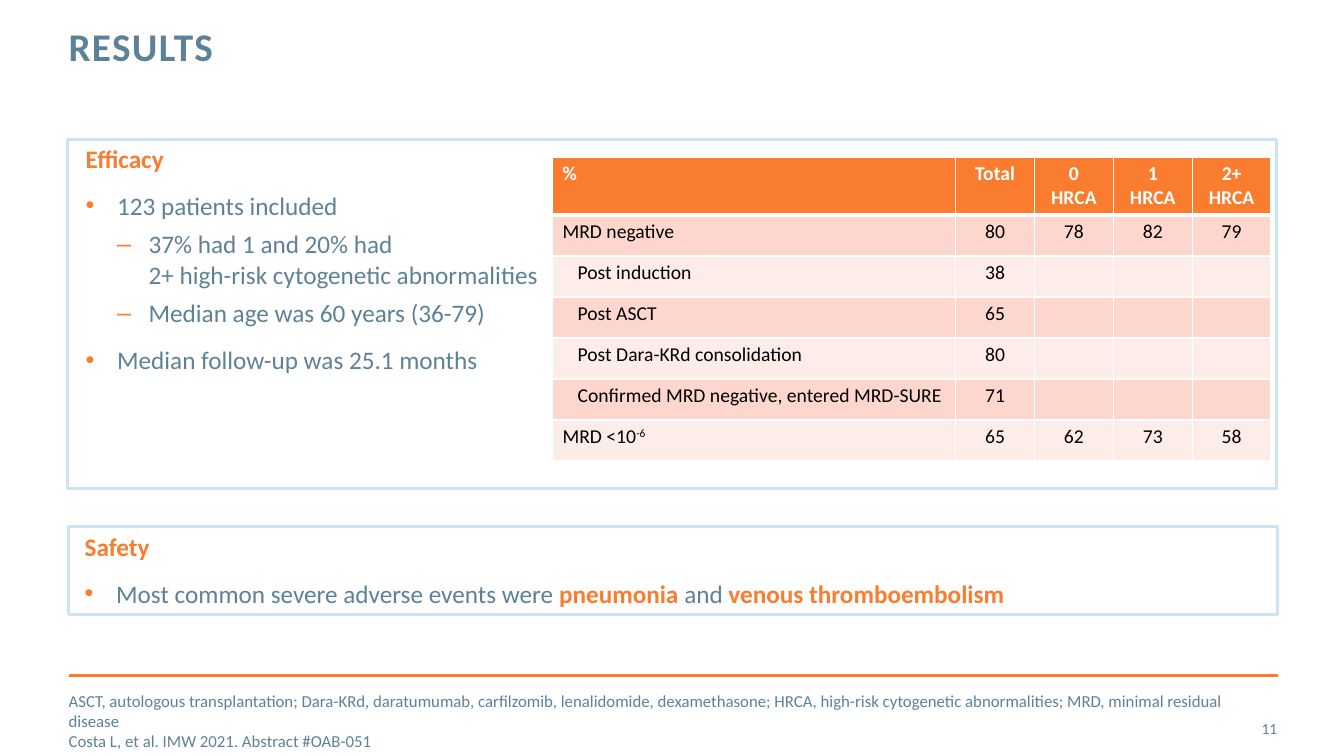
from copy import deepcopy

from lxml import etree
from pptx import Presentation, util as u
from pptx.dml.color import RGBColor
from pptx.enum import shapes, text
from pptx.oxml import ns

ORANGE, SLATE, SKY = "FA7C2E", "5D8298", "C9E5F3"
WHITE, BLACK = "FFFFFF", "000000"
BANDS = ("FDD7CD", "FEECE8")
HEAD = dict(size=18, color=ORANGE, bold=True)
ITEM = dict(size=18, color=SLATE, bold=False)
NOTE = dict(size=12, color=SLATE)
BULLETS = {"•": 0, "–": 1}


def rgb(value):
    return RGBColor.from_string(value)


def sub(parent, tag, **attrs):
    return etree.SubElement(parent, ns.qn("a:" + tag), attrs)


class Deck:
    font = "Calibri"

    def __init__(self, width, height):
        self.prs = Presentation()
        self.prs.slide_width, self.prs.slide_height = u.Pt(width), u.Pt(height)
        self.slide = self.prs.slides.add_slide(self.prs.slide_layouts[1])
        self.shapes = self.slide.shapes

    def style(self, font, size, color, **fmt):
        values = dict(name=self.font, size=u.Pt(size), **fmt)
        for key, value in values.items():
            setattr(font, key, value)
        font.color.rgb = rgb(color)

    def add_runs(self, p, runs):
        for words, fmt in runs:
            fmt = dict(fmt)
            extra = fmt.pop("extra", {})
            for i, line in enumerate(words.split("\n")):
                if i:
                    p.add_line_break()
                    p._p[-1].append(deepcopy(r._r.rPr))
                r = p.add_run()
                r.text = line
                self.style(r.font, **fmt)
                for key, value in extra.items():
                    r._r.get_or_add_rPr().set(key, value)

    def bullet(self, p, mark):
        pPr = p._p.get_or_add_pPr()
        level = BULLETS.get(mark, 0)
        p.level = level
        pPr.set("marL", str(u.Pt(22.5 * (level + 1)) if mark else 0))
        pPr.set("indent", str(u.Pt(-22.5) if mark else 0))
        if mark:
            sub(sub(pPr, "buClr"), "srgbClr", val=ORANGE)
            sub(pPr, "buFont", typeface="Arial")
            sub(pPr, "buChar", char=mark)
        else:
            sub(pPr, "buNone")

    def frame(self, sp, margins=(0, 0, 0, 0), anchor=text.MSO_ANCHOR.TOP):
        tf = sp.text_frame
        sides = ("margin_left", "margin_top", "margin_right", "margin_bottom")
        fmt = dict(zip(sides, map(u.Pt, margins)), word_wrap=True,
                   auto_size=text.MSO_AUTO_SIZE.NONE, vertical_anchor=anchor)
        for key, value in fmt.items():
            setattr(tf, key, value)
        return tf

    def fill_list(self, tf, items):
        for i, (mark, before, runs) in enumerate(items):
            p = tf.add_paragraph() if i else tf.paragraphs[0]
            self.bullet(p, mark)
            fmt = dict(alignment=text.PP_ALIGN.LEFT, space_before=u.Pt(before))
            for key, value in fmt.items():
                setattr(p, key, value)
            self.add_runs(p, runs)

    def place(self, sp, box):
        for key, value in zip(("left", "top", "width", "height"), box):
            setattr(sp, key, u.Pt(value))
        return sp

    def title(self, box, words):
        tf = self.frame(self.place(self.shapes.title, box))
        p = tf.paragraphs[0]
        p.alignment, p.line_spacing = text.PP_ALIGN.LEFT, u.Pt(30)
        self.add_runs(p, [(words, dict(size=28, color=SLATE, bold=True,
                                       extra={"spc": "100"}))])

    def body(self, box, items):
        sp = self.place(self.slide.placeholders[1], box)
        self.fill_list(self.frame(sp), items)

    def note(self, box, items):
        sp = self.shapes.add_textbox(*map(u.Pt, box))
        self.fill_list(self.frame(sp, anchor=text.MSO_ANCHOR.MIDDLE), items)

    def number(self, box, value):
        sp = self.shapes.add_textbox(*map(u.Pt, box))
        p = self.frame(sp, anchor=text.MSO_ANCHOR.MIDDLE).paragraphs[0]
        p.alignment = text.PP_ALIGN.RIGHT
        self.add_runs(p, [(value, dict(size=11, color=SLATE))])

    def panel(self, box, items=()):
        sp = self.shapes.add_shape(shapes.MSO_SHAPE.RECTANGLE, *map(u.Pt, box))
        sp.shadow.inherit = False
        sp.fill.background()
        sp.line.color.rgb, sp.line.width = rgb(SKY), u.Pt(2)
        self.fill_list(self.frame(sp, (11.5, 3.6, 7.2, 3.6)), items)

    def rule(self, x1, x2, y):
        line = self.shapes.add_connector(shapes.MSO_CONNECTOR.STRAIGHT,
                                         *map(u.Pt, (x1, y, x2, y)))
        line.line.color.rgb, line.line.width = rgb(ORANGE), u.Pt(2)
        sub(line._element.spPr, "effectLst")

    def borders(self, cell, widths):
        tcPr = cell._tc.get_or_add_tcPr()
        for i, (side, width) in enumerate(zip("LRTB", widths)):
            ln = sub(tcPr, "ln" + side, w=str(u.Pt(width)))
            sub(sub(ln, "solidFill"), "srgbClr", val=WHITE)
            tcPr.insert(i, ln)

    def table(self, box, widths, heights, rows):
        sp = self.shapes.add_table(len(rows), len(widths), *map(u.Pt, box))
        table = sp.table
        for column, width in zip(table.columns, widths):
            column.width = u.Pt(width)
        for r, (height, (indent, *values)) in enumerate(zip(heights, rows)):
            table.rows[r].height = u.Pt(height)
            fmt = dict(size=14, color=BLACK if r else WHITE, bold=r == 0)
            for c in range(len(widths)):
                cell = table.cell(r, c)
                cell.fill.solid()
                cell.fill.fore_color.rgb = rgb(BANDS[(r - 1) % 2] if r else ORANGE)
                self.borders(cell, (1, 1, 3 if r == 1 else 1, 1 if r else 3))
                if c >= len(values):
                    continue
                p = cell.text_frame.paragraphs[0]
                if c:
                    p.alignment = text.PP_ALIGN.CENTER
                elif indent:
                    p._p.get_or_add_pPr().set("marL", str(u.Pt(indent)))
                base, *power = values[c].split("^")
                self.add_runs(p, [(base, fmt)])
                self.add_runs(p, [(s, dict(fmt, extra={"baseline": "30000"}))
                                  for s in power])


def main():
    deck = Deck(960, 540)
    deck.rule(49, 913, 482.4)
    deck.title((49, 19.4, 688, 63.4), "RESULTS")
    deck.body((61.2, 102.2, 834.5, 236.2), [
        ("", 0, [("Efficacy", HEAD)]),
        ("•", 12, [("123 patients included", ITEM)]),
        ("–", 6, [("37% had 1 and 20% had\n2+ high-risk cytogenetic abnormalities", ITEM)]),
        ("–", 6, [("Median age was 60 years (36-79)", ITEM)]),
        ("•", 12, [("Median follow-up was 25.1 months", ITEM)]),
    ])
    deck.number((850.3, 506.2, 62, 28.8), "11")
    deck.note((49, 500.4, 833.8, 28.8), [
        ("", 0, [("ASCT, autologous transplantation; Dara-KRd, daratumumab, carfilzomib, "
                  "lenalidomide, dexamethasone; HRCA, high-risk cytogenetic abnormalities; "
                  "MRD, minimal residual disease\n"
                  "Costa L, et al. IMW 2021. Abstract #OAB-051", NOTE)]),
    ])
    deck.panel((49, 375.8, 863.5, 63.4), [
        ("", 0, [("Safety", HEAD)]),
        ("•", 12, [("Most common severe adverse events were ", ITEM),
                   ("pneumonia ", HEAD), ("and", ITEM),
                   (" venous thromboembolism", HEAD)]),
    ])
    deck.panel((48.2, 99.4, 863.5, 249.8))
    deck.table((394.6, 112.3, 513.4, 217), [288] + [56.35] * 4, [41] + [29.3] * 6, [
        (0, "%", "Total", "0 HRCA", "1 HRCA", "2+ HRCA"),
        (0, "MRD negative", "80", "78", "82", "79"),
        (10.8, "Post induction", "38"),
        (10.8, "Post ASCT", "65"),
        (10.8, "Post Dara-KRd consolidation", "80"),
        (10.8, "Confirmed MRD negative, entered MRD-SURE", "71"),
        (0, "MRD <10^-6", "65", "62", "73", "58"),
    ])
    deck.prs.save("out.pptx")


if __name__ == "__main__":
    main()
